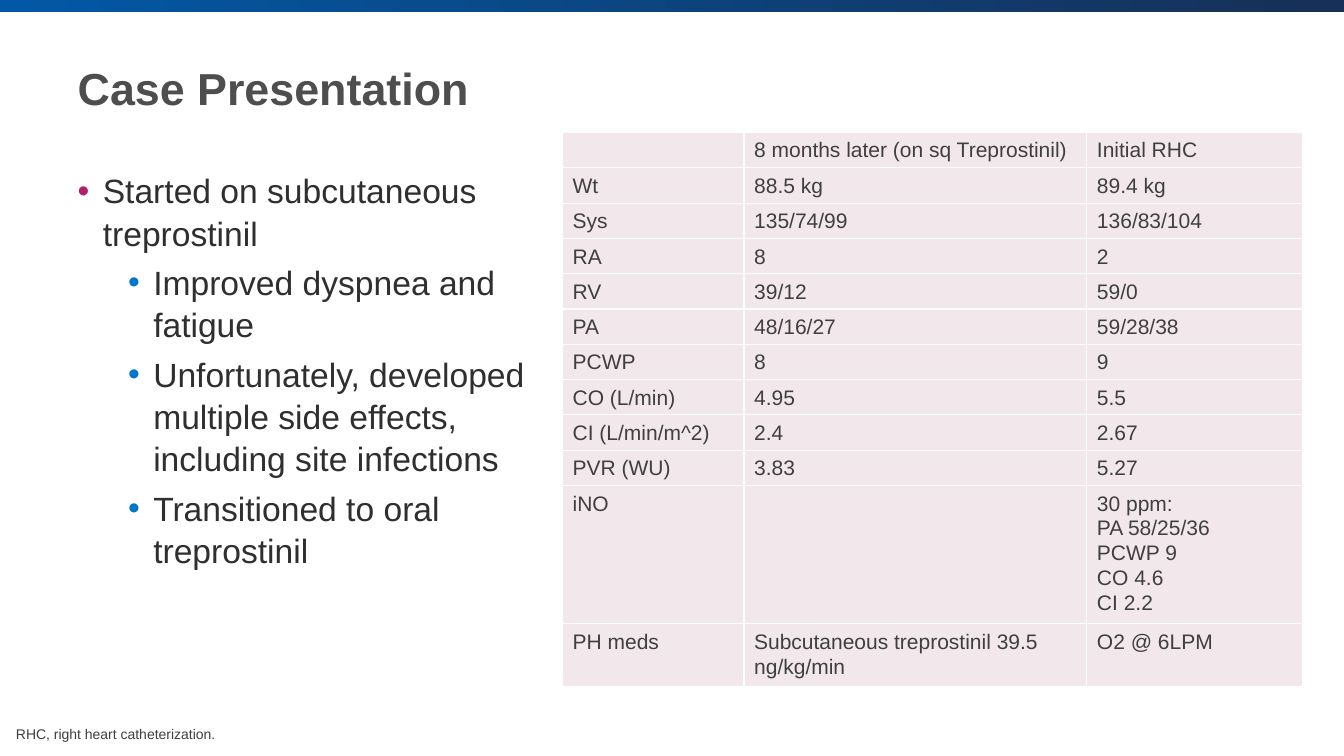
import dataclasses

import lxml.etree
import pptx
import pptx.dml.color
import pptx.enum.shapes
import pptx.enum.text
import pptx.oxml
import pptx.oxml.ns
import pptx.util

Inches, Pt = pptx.util.Inches, pptx.util.Pt
RGB = pptx.dml.color.RGBColor.from_string
qn = pptx.oxml.ns.qn
WIDTH, HEIGHT = Inches(13.33), Inches(7.5)


@dataclasses.dataclass(frozen=True)
class Theme:
    font: str = "Arial"
    title: str = "4D4E4D"
    body: str = "2F2F2F"
    detail: str = "3F3F3F"
    cell: str = "F2E8EB"
    rule: str = "FFFFFF"
    bar: tuple = ("0258A6", "173057")
    bullets: tuple = ("B21E6C", "0075C9")
    title_size: int = 32
    body_size: int = 24
    cell_size: int = 15
    note_size: int = 10


THEME = Theme()

TREATMENT = [
    (0, "Started on subcutaneous treprostinil"),
    (1, "Improved dyspnea and fatigue"),
    (1, "Unfortunately, developed multiple side effects, including site infections"),
    (1, "Transitioned to oral treprostinil"),
]

MEASUREMENTS = [
    ("", "8 months later (on sq Treprostinil)", "Initial RHC"),
    ("Wt", "88.5 kg", "89.4 kg"),
    ("Sys", "135/74/99", "136/83/104"),
    ("RA", "8", "2"),
    ("RV", "39/12", "59/0"),
    ("PA", "48/16/27", "59/28/38"),
    ("PCWP", "8", "9"),
    ("CO (L/min)", "4.95", "5.5"),
    ("CI (L/min/m^2)", "2.4", "2.67"),
    ("PVR (WU)", "3.83", "5.27"),
    ("iNO", "", "30 ppm:\nPA 58/25/36\nPCWP 9\nCO 4.6\nCI 2.2"),
    ("PH meds", "Subcutaneous treprostinil 39.5 ng/kg/min", "O2 @ 6LPM"),
]
COLUMN_WIDTHS = (1.8, 3.4, 2.14)
ROW_HEIGHTS = (0.35,) * 10 + (1.37, 0.63)


def place(part, left, top, width, height):
    part.left, part.top = Inches(left), Inches(top)
    part.width, part.height = Inches(width), Inches(height)


def style(paragraph, size, color, bold=False):
    for run in paragraph.runs:
        run.font.name = THEME.font
        run.font.size = Pt(size)
        run.font.bold = bold
        run.font.color.rgb = RGB(color)


def add_top_bar(slide):
    bar = slide.shapes.add_shape(
        pptx.enum.shapes.MSO_SHAPE.RECTANGLE, 0, 0, WIDTH, Inches(0.12))
    bar.shadow.inherit = False
    bar.line.fill.background()
    bar.fill.gradient()
    bar.fill.gradient_angle = 0
    for stop, color, position in zip(bar.fill.gradient_stops, THEME.bar, (0, 0.99)):
        stop.color.rgb = RGB(color)
        stop.position = position


def fill_title(title, text):
    place(title, 0.67, 0.22, 11.75, 1.3)
    frame = title.text_frame
    frame.text = text
    frame.vertical_anchor = pptx.enum.text.MSO_ANCHOR.MIDDLE
    frame.paragraphs[0].alignment = pptx.enum.text.PP_ALIGN.LEFT
    style(frame.paragraphs[0], THEME.title_size, THEME.title, bold=True)


def set_bullet(paragraph, level):
    properties = paragraph._p.get_or_add_pPr()
    properties.set("marL", str(Inches(0.25 + 0.5 * level)))
    properties.set("indent", str(Inches(-0.25)))
    color = lxml.etree.SubElement(properties, qn("a:buClr"))
    lxml.etree.SubElement(color, qn("a:srgbClr"), val=THEME.bullets[level])
    lxml.etree.SubElement(properties, qn("a:buFont"), typeface=THEME.font)
    lxml.etree.SubElement(properties, qn("a:buChar"), char="•")


def fill_list(body, items):
    place(body, 0.67, 1.62, 5.22, 5.16)
    frame = body.text_frame
    frame.text = "\n".join(text for _, text in items)
    frame.auto_size = pptx.enum.text.MSO_AUTO_SIZE.NONE
    for paragraph, (level, _) in zip(frame.paragraphs, items):
        paragraph.level = level
        paragraph.line_spacing = 1.05
        paragraph.space_before = Pt(5 if level else 10)
        set_bullet(paragraph, level)
        style(paragraph, THEME.body_size, THEME.body)


def set_borders(cell):
    properties = cell._tc.get_or_add_tcPr()
    for index, side in enumerate(("lnL", "lnR", "lnT", "lnB")):
        line = lxml.etree.Element(qn("a:" + side), w=str(Pt(1)))
        fill = lxml.etree.SubElement(line, qn("a:solidFill"))
        lxml.etree.SubElement(fill, qn("a:srgbClr"), val=THEME.rule)
        properties.insert(index, line)


def fill_cell(cell, text):
    cell.text_frame.text = text
    cell.margin_left, cell.margin_right = Inches(0.1), Inches(0.01)
    cell.margin_top = cell.margin_bottom = Inches(0.05)
    cell.fill.solid()
    cell.fill.fore_color.rgb = RGB(THEME.cell)
    set_borders(cell)
    for paragraph in cell.text_frame.paragraphs:
        paragraph.line_spacing = 1.07
        style(paragraph, THEME.cell_size, THEME.detail)
        # Keeps blank cells from stretching their row
        lxml.etree.SubElement(
            paragraph._p, qn("a:endParaRPr"), sz=str(THEME.cell_size * 100))


def add_measurements(slide, rows):
    table = slide.shapes.add_table(
        len(rows), len(COLUMN_WIDTHS), Inches(5.58), Inches(1.31),
        Inches(sum(COLUMN_WIDTHS)), Inches(sum(ROW_HEIGHTS))).table
    table.first_row = table.horz_banding = False
    for column, width in zip(table.columns, COLUMN_WIDTHS):
        column.width = Inches(width)
    for row, height, texts in zip(table.rows, ROW_HEIGHTS, rows):
        row.height = Inches(height)
        for cell, text in zip(row.cells, texts):
            fill_cell(cell, text)


def add_footnote(slide, text):
    footnote = slide.shapes.add_textbox(0, 0, 0, 0)
    place(footnote, 0.06, 7.15, 6.48, 0.27)
    footnote.text_frame.word_wrap = True
    footnote.text_frame.text = text
    style(footnote.text_frame.paragraphs[0], THEME.note_size, THEME.detail)


def main():
    presentation = pptx.Presentation()
    presentation.slide_width, presentation.slide_height = WIDTH, HEIGHT
    slide = presentation.slides.add_slide(presentation.slide_layouts[1])

    # Heading and treatment course
    add_top_bar(slide)
    fill_title(slide.shapes.title, "Case Presentation")
    fill_list(slide.placeholders[1], TREATMENT)

    # Catheterization results
    add_measurements(slide, MEASUREMENTS)
    add_footnote(slide, "RHC, right heart catheterization.")

    presentation.save("out.pptx")


if __name__ == "__main__":
    main()
